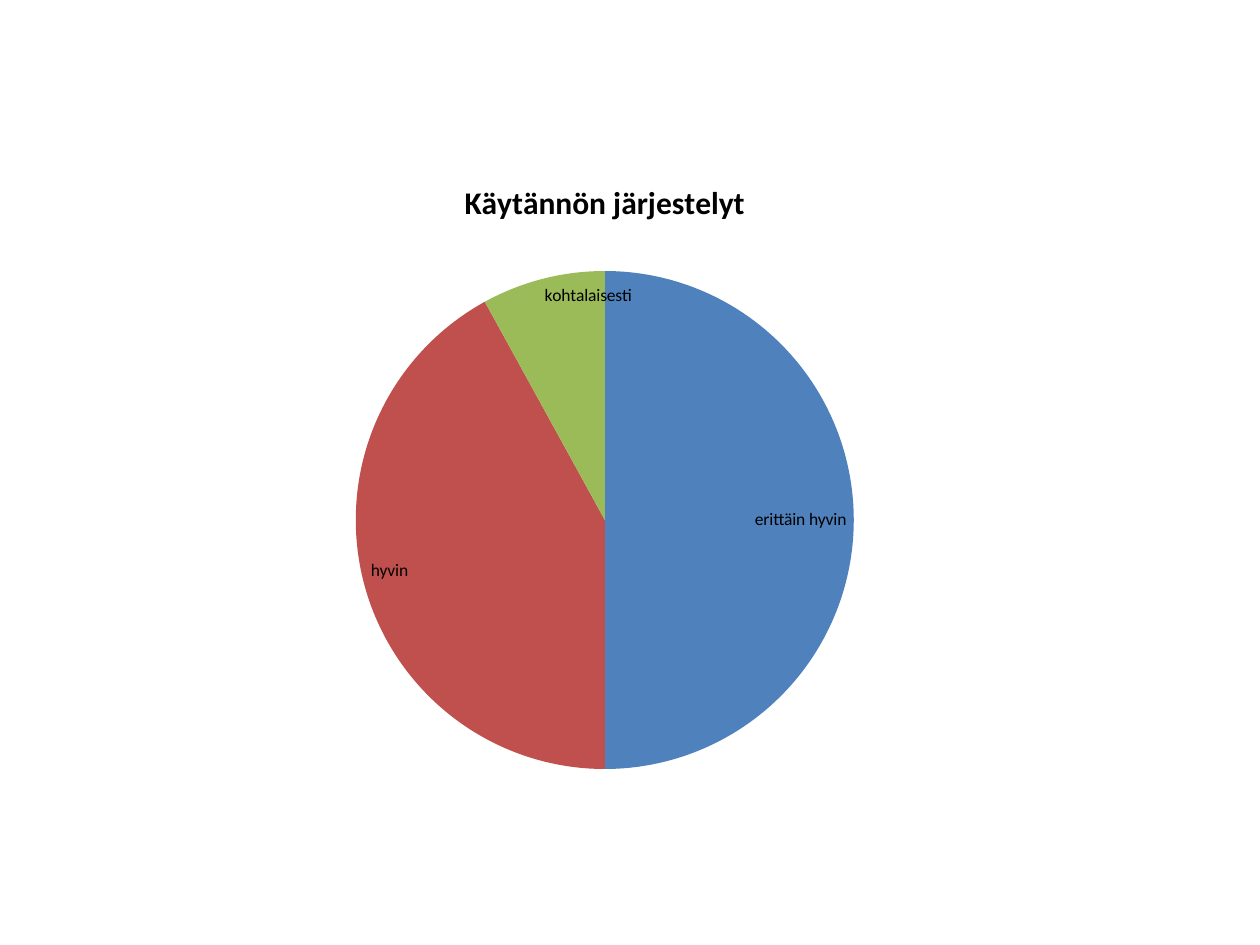
from dataclasses import dataclass
from typing import NamedTuple

from lxml.etree import SubElement
from pptx import Presentation
from pptx.chart.chart import Chart
from pptx.chart.data import CategoryChartData
from pptx.dml.color import RGBColor
from pptx.enum.chart import XL_CHART_TYPE as ChartType, XL_LABEL_POSITION as LabelPosition
from pptx.oxml.ns import qn
from pptx.util import Inches, Pt


class Answer(NamedTuple):
    label: str
    percent: int
    color: str


class Box(NamedTuple):
    """Left, top, width and height as shares of the containing area."""
    x: float
    y: float
    w: float
    h: float


@dataclass(frozen=True)
class Theme:
    font: str = "Calibri"
    text: str = "000000"
    title_size: int = 18
    label_size: int = 10


THEME = Theme()
SLIDE_WIDTH, SLIDE_HEIGHT = Inches(10), Inches(7.5)
CHART_BOX = Box(0.114, 0.164, 0.732, 0.672)
PIE_BOX = Box(0.23, 0.18, 0.54, 0.79)
TITLE = "Käytännön järjestelyt"
ANSWERS = [
    Answer("erittäin hyvin", 50, "4F81BD"),
    Answer("hyvin", 42, "C0504D"),
    Answer("kohtalaisesti", 8, "9BBB59"),
]


def style_font(font, size: int, bold: bool = False) -> None:
    font.name = THEME.font
    font.size = Pt(size)
    font.bold = bold
    font.color.rgb = RGBColor.from_string(THEME.text)


def add_title(chart: Chart, text: str) -> None:
    chart.has_title = True
    chart.chart_title.include_in_layout = False
    run = chart.chart_title.text_frame.paragraphs[0].add_run()
    run.text = text
    style_font(run.font, THEME.title_size, bold=True)


def place_plot(chart: Chart, box: Box) -> None:
    """Fix the inner plot area at the given shares of the chart."""
    plot_area = chart.plots[0]._element.getparent()
    layout = plot_area.find(qn("c:layout"))
    if layout is None:
        layout = SubElement(plot_area, qn("c:layout"))
        plot_area.insert(0, layout)
    manual = SubElement(layout, qn("c:manualLayout"))
    settings = {"layoutTarget": "inner", "xMode": "edge", "yMode": "edge", **box._asdict()}
    for name, value in settings.items():
        SubElement(manual, qn(f"c:{name}")).set("val", str(value))


def add_pie(slide, box: Box, answers: list[Answer]) -> Chart:
    data = CategoryChartData()
    data.categories = [answer.label for answer in answers]
    data.add_series("Series 1", [answer.percent for answer in answers])
    frame = slide.shapes.add_chart(
        ChartType.PIE,
        int(box.x * SLIDE_WIDTH), int(box.y * SLIDE_HEIGHT),
        int(box.w * SLIDE_WIDTH), int(box.h * SLIDE_HEIGHT), data)
    chart = frame.chart
    chart.has_legend = False
    style_font(chart.font, THEME.label_size)

    plot = chart.plots[0]
    plot.vary_by_categories = True
    for index, answer in enumerate(answers):
        fill = plot.series[0].points[index].format.fill
        fill.solid()
        fill.fore_color.rgb = RGBColor.from_string(answer.color)

    labels = plot.series[0].data_labels
    labels.show_category_name = True
    labels.show_value = False
    labels.show_percentage = False
    labels.position = LabelPosition.INSIDE_END
    style_font(labels.font, THEME.label_size)
    return chart


def main() -> None:
    presentation = Presentation()
    presentation.slide_width, presentation.slide_height = SLIDE_WIDTH, SLIDE_HEIGHT
    slide = presentation.slides.add_slide(presentation.slide_layouts[6])
    chart = add_pie(slide, CHART_BOX, ANSWERS)
    add_title(chart, TITLE)
    place_plot(chart, PIE_BOX)
    presentation.save("out.pptx")


if __name__ == "__main__":
    main()
